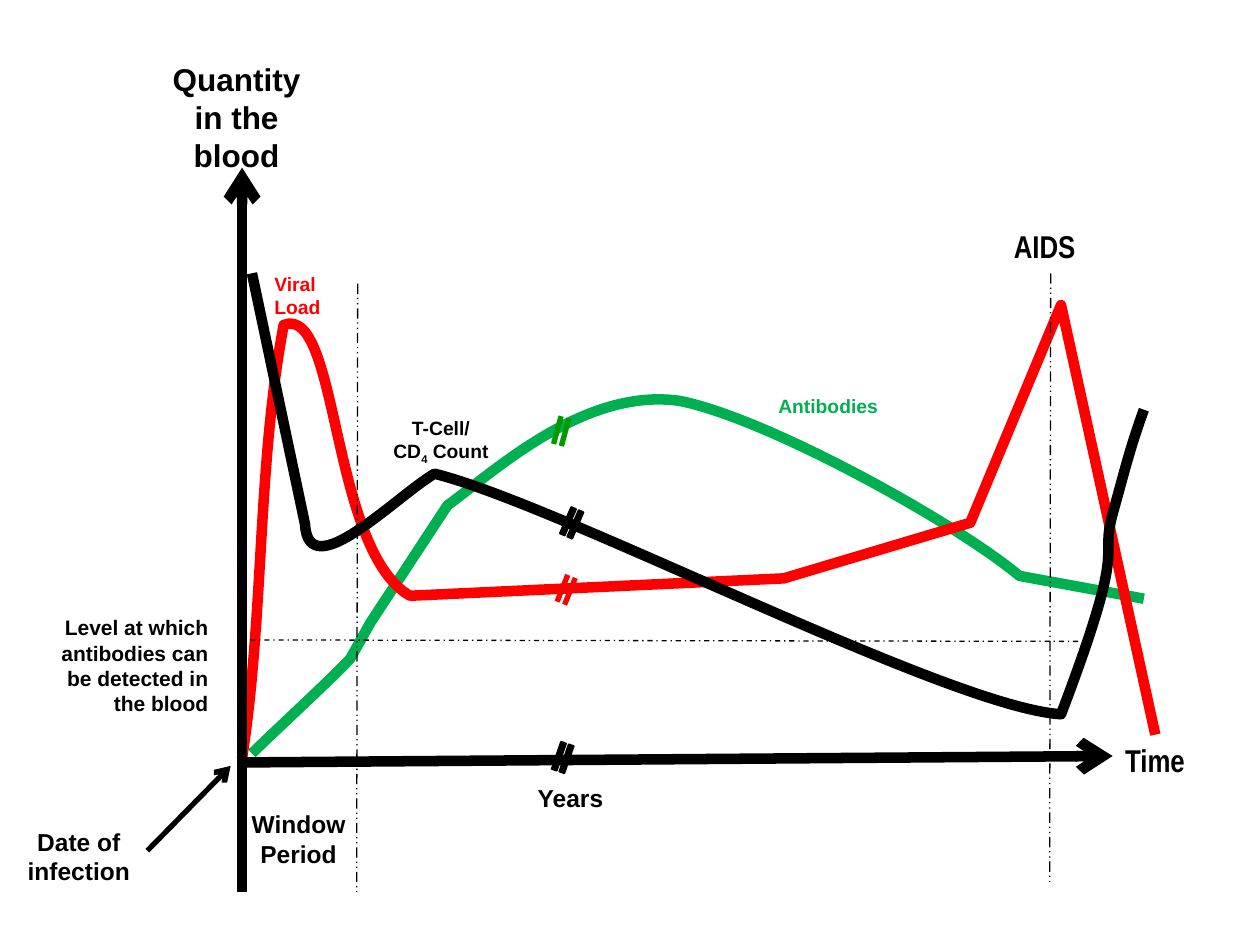
from pptx import Presentation
from pptx import util as u
from pptx.dml.color import RGBColor
from pptx.enum import dml, shapes, text
from pptx.oxml import ns
from lxml import etree

BLACK, RED, GREEN, DARK_GREEN, WHITE = "000000", "FF0000", "00B050", "009900", "FFFFFF"
LEFT, CENTER, RIGHT = text.PP_ALIGN.LEFT, text.PP_ALIGN.CENTER, text.PP_ALIGN.RIGHT
TOP, MIDDLE = text.MSO_ANCHOR.TOP, text.MSO_ANCHOR.MIDDLE
DASH_DOT = dml.MSO_LINE.DASH_DOT
DASH_DOT_DOT = dml.MSO_LINE.DASH_DOT_DOT


def paint(target, color):
    """Give a fill a solid colour."""
    target.solid()
    target.fore_color.rgb = RGBColor.from_string(color)


def stroke(line, color, width):
    paint(line.fill, color)
    line.width = u.Pt(width)


def cm(*values):
    return [u.Cm(value) for value in values]


def style_text(frame, size, color=BLACK, align=LEFT, font="Arial"):
    for para in frame.paragraphs:
        para.alignment = align
        for span in para.runs:
            span.font.name = font
            span.font.size = u.Pt(size)
            span.font.bold = True
            span.font.color.rgb = RGBColor.from_string(color)


def add_label(page, words, place, size, color=BLACK, align=LEFT, font="Arial", anchor=TOP):
    box = page.shapes.add_textbox(*cm(*place))
    frame = box.text_frame
    frame.word_wrap = True
    frame.auto_size = text.MSO_AUTO_SIZE.SHAPE_TO_FIT_TEXT
    frame.vertical_anchor = anchor
    frame.text = words
    style_text(frame, size, color, align, font)
    return frame


def add_cell_count_label(page):
    """Two-line label with the 4 of CD4 as a subscript."""
    frame = add_label(page, "T-Cell/\nCD", (7.62, 8.26, 2.54, 1.19), 11)
    para = frame.paragraphs[1]
    digit, rest = para.add_run(), para.add_run()
    digit.text, rest.text = "4", " Count"
    style_text(frame, 11, align=CENTER)
    digit._r.get_or_add_rPr().set("baseline", "-25000")


def add_curve(page, start, segments, color):
    """Draw segments of one point (straight) or three points (Bézier)."""
    builder = page.shapes.build_freeform(*cm(*start), scale=1.0)
    builder.add_line_segments(
        [cm(*point) for segment in segments for point in segment], close=False)
    curve = builder.convert_to_shape()
    steps = iter(list(curve._element.iter(ns.qn("a:lnTo"))))
    for segment in segments:
        first = next(steps)
        if len(segment) == 3:
            first.tag = ns.qn("a:cubicBezTo")
            for _ in range(2):
                step = next(steps)
                first.append(step[0])
                step.getparent().remove(step)
    curve.fill.background()
    curve.shadow.inherit = False
    stroke(curve.line, color, 6)


def add_line(page, start, end, width, dash=None, arrow=False):
    line = page.shapes.add_connector(shapes.MSO_CONNECTOR.STRAIGHT, *cm(*start, *end))
    stroke(line.line, BLACK, width)
    if dash:
        line.line.dash_style = dash
    if arrow:
        outline = line.line._get_or_add_ln()
        etree.SubElement(outline, ns.qn("a:tailEnd"), type="arrow")
    etree.SubElement(line._element.spPr, ns.qn("a:effectLst"))


def add_break_mark(page, left, top, angle, color, outlined=False):
    """Tilted equals sign that marks a break in the time scale."""
    mark = page.shapes.add_shape(
        shapes.MSO_SHAPE.MATH_EQUAL, *cm(left, top, 0.79, 0.46))
    mark.rotation = angle
    mark.shadow.inherit = False
    paint(mark.fill, color)
    if outlined:
        stroke(mark.line, color, 1)
    else:
        mark.line.fill.background()


def add_years(page):
    box = page.shapes.add_shape(
        shapes.MSO_SHAPE.RECTANGLE, *cm(10.59, 15.67, 1.47, 1.07))
    box.shadow.inherit = False
    paint(box.fill, WHITE)
    box.line.fill.background()
    box.text_frame.word_wrap = False
    box.text_frame.vertical_anchor = TOP
    box.text_frame.text = "Years"
    style_text(box.text_frame, 14)


def main():
    deck = Presentation()
    deck.slide_width, deck.slide_height = cm(25.4, 19.05)
    page = deck.slides.add_slide(deck.slide_layouts[6])

    # Axis and curve labels
    add_label(page, "Quantity in the blood", (3.18, 1.07, 3.18, 2.57), 18,
              align=CENTER, anchor=MIDDLE)
    add_label(page, "Time", (22.43, 14.81, 2.34, 1.02), 18, font="Arial Narrow")
    add_label(page, "Date of infection", (0, 16.54, 3.18, 1.45), 14, align=CENTER)
    add_label(page, "Level at which antibodies can be detected in the blood",
              (0.84, 12.27, 3.61, 2.31), 12, align=RIGHT)
    add_label(page, "Viral Load", (5.28, 5.36, 2.34, 1.19), 11, RED)
    add_label(page, "Antibodies", (15.44, 7.82, 3.61, 0.74), 11, GREEN)
    add_label(page, "Window Period", (4.65, 16.18, 2.74, 1.45), 14,
              align=CENTER, anchor=MIDDLE)

    # Antibodies
    add_curve(page, (5.08, 15.19), [
        [(5.49, 14.78), (6.65, 13.72), (7.06, 13.28)],
        [(7.47, 12.55)],
        [(9.02, 10.19)],
        [(10.03, 9.45), (11.79, 7.82), (13.69, 8.08)],
        [(15.42, 8.41), (19.25, 10.52), (20.55, 11.61)],
        [(23.06, 12.07)],
    ], GREEN)

    # Viral load
    add_curve(page, (4.88, 15.29), [
        [(5.33, 12.37), (5.18, 9.42), (5.72, 6.55)],
        [(6.83, 6.12), (6.65, 11), (8.23, 11.99)],
        [(8.28, 12.01)],
        [(15.8, 11.66)],
        [(19.56, 10.54)],
        [(21.39, 6.15)],
        [(23.29, 14.81)],
    ], RED)

    # Axes, detection level, infection pointer and end of window period
    add_line(page, (4.88, 17.98), (4.88, 3.38), 6, arrow=True)
    add_line(page, (4.88, 15.37), (22.43, 15.24), 6, arrow=True)
    add_line(page, (22.02, 12.93), (4.88, 12.9), 0.75, DASH_DOT)
    add_line(page, (2.97, 17.15), (4.65, 15.44), 3, arrow=True)
    add_line(page, (7.21, 5.72), (7.19, 17.98), 0.75, DASH_DOT_DOT)

    # Breaks in the time scale
    add_break_mark(page, 10.92, 8.46, 285.1, DARK_GREEN)
    add_break_mark(page, 10.95, 15.04, 288.9, BLACK, outlined=True)
    add_break_mark(page, 11.02, 11.66, 291.8, RED)
    add_years(page)

    # T-cell count
    add_curve(page, (23.06, 8.26), [
        [(22.78, 9.04), (22.71, 9.35), (22.43, 10.36)],
        [(22.15, 11.4), (22.78, 10.74), (21.39, 14.4)],
        [(19.1, 14.25), (11.33, 10.19), (8.76, 9.55)],
        [(7.98, 10.01), (6.22, 11.84), (6.15, 10.57)],
        [(5.08, 5.51)],
    ], BLACK)
    add_cell_count_label(page)
    add_break_mark(page, 11.13, 10.31, 293.3, BLACK, outlined=True)

    # Onset of AIDS
    add_line(page, (21.18, 5.51), (21.16, 17.78), 0.75, DASH_DOT_DOT)
    add_label(page, "AIDS", (19.89, 4.45, 2.34, 1.02), 18,
              align=CENTER, font="Arial Narrow")

    deck.save("out.pptx")


if __name__ == "__main__":
    main()
